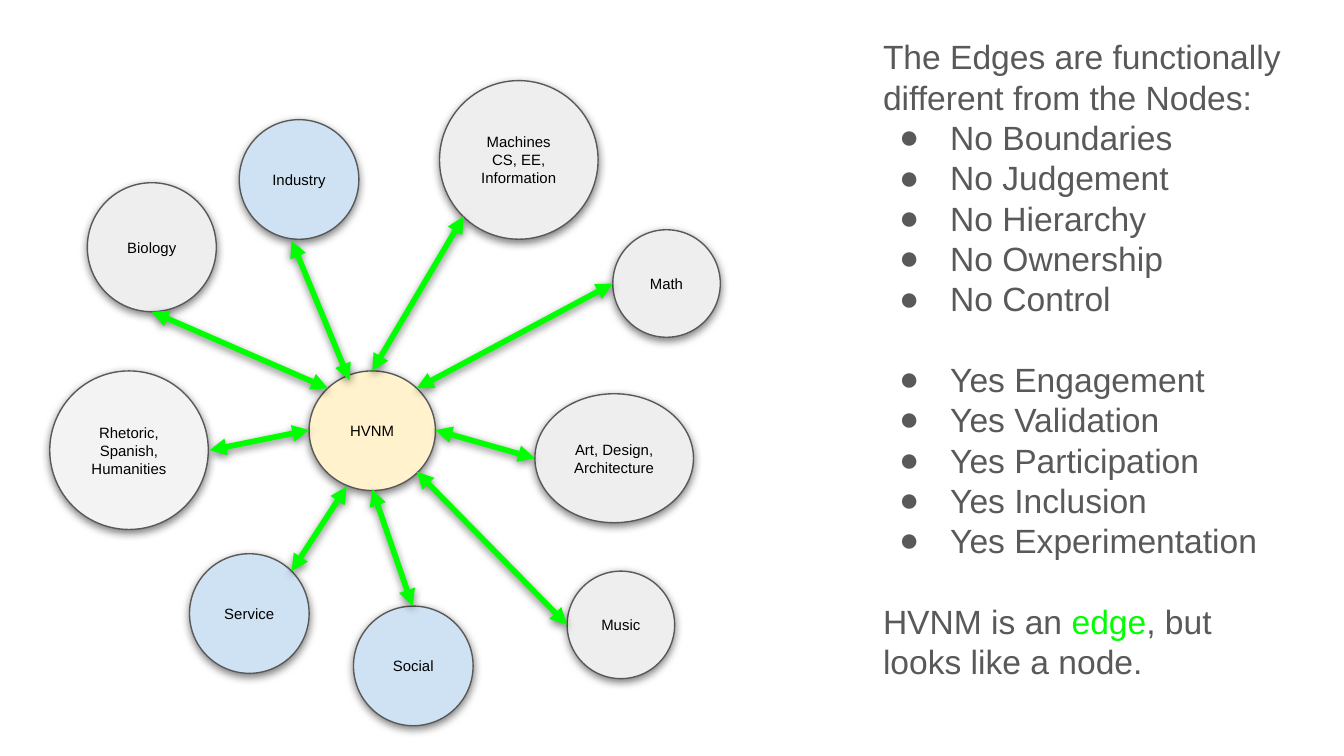
from lxml.etree import SubElement as Sub
from pptx import Presentation
from pptx.dml.color import RGBColor
from pptx.enum.shapes import MSO_CONNECTOR as Line, MSO_SHAPE as Shape
from pptx.enum.text import MSO_ANCHOR as Anchor, MSO_AUTO_SIZE as Fit, PP_ALIGN as Align
from pptx.oxml.ns import qn
from pptx.util import Inches, Pt

GRAY, BLUE, DARK, GREEN = "EEEEEE", "CFE2F3", "595959", "00FF00"
LEAD = 21.6

NODES = [
    ("Machines\nCS, EE, Information", 3.27, 0.6, 1.18, 1.18, GRAY),
    ("Art, Design, Architecture", 3.98, 2.93, 1.18, 0.96, GRAY),
    ("HVNM", 2.3, 2.76, 0.94, 0.89, "FFF2CC"),
    ("Biology", 0.65, 1.36, 0.96, 0.96, GRAY),
    ("Math", 4.56, 1.71, 0.8, 0.8, GRAY),
    ("Service", 1.41, 4.12, 0.89, 0.89, BLUE),
    ("Social", 2.63, 4.51, 0.89, 0.89, BLUE),
    ("Music", 4.22, 4.25, 0.8, 0.8, GRAY),
    ("Rhetoric, Spanish,\nHumanities", 0.37, 2.76, 1.18, 1.18, "F3F3F3"),
    ("Industry", 1.78, 0.89, 0.89, 0.89, BLUE),
]

EDGES = [
    (1.13, 2.32, 2.44, 2.89),
    (2.77, 2.76, 3.45, 1.61),
    (4.56, 2.11, 3.1, 2.89),
    (3.07, 4.51, 2.77, 3.64),
    (1.56, 3.35, 2.3, 3.2),
    (2.17, 4.25, 2.58, 3.62),
    (3.98, 3.41, 3.24, 3.2),
    (4.22, 4.65, 3.1, 3.51),
    (2.17, 1.79, 2.6, 2.83),
]

NO = ["Boundaries", "Judgement", "Hierarchy", "Ownership", "Control"]
YES = ["Engagement", "Validation", "Participation", "Inclusion", "Experimentation"]


def color(code):
    return RGBColor.from_string(code)


def write(par, text, size=18, code=DARK, align=Align.LEFT):
    par.alignment = align
    run = par.add_run()
    run.text = text
    run.font.name = "Arial"
    run.font.size = Pt(size)
    run.font.color.rgb = color(code)


def shade(props):
    for old in props.findall(qn("a:effectLst")):
        props.remove(old)
    group = Sub(props, qn("a:effectLst"))
    outer = Sub(group, qn("a:outerShdw"), blurRad=str(Pt(4.5)), dist=str(Pt(1.5)),
                dir="5400000", algn="bl", rotWithShape="0")
    black = Sub(outer, qn("a:srgbClr"), val="000000")
    Sub(black, qn("a:alpha"), val="50000")


def inset(frame):
    frame.margin_left = frame.margin_right = Inches(0.1)
    frame.margin_top = frame.margin_bottom = Inches(0.1)
    frame.word_wrap = True


def add_node(slide, text, left, top, width, height, fill):
    node = slide.shapes.add_shape(Shape.OVAL, Inches(left), Inches(top),
                                  Inches(width), Inches(height))
    node.fill.solid()
    node.fill.fore_color.rgb = color(fill)
    node.line.color.rgb = color(DARK)
    node.line.width = Pt(0.75)
    shade(node.element.spPr)
    frame = node.text_frame
    inset(frame)
    frame.vertical_anchor = Anchor.MIDDLE
    for i, line in enumerate(text.split("\n")):
        par = frame.add_paragraph() if i else frame.paragraphs[0]
        write(par, line, size=8, code="000000", align=Align.CENTER)


def add_edge(slide, *ends):
    edge = slide.shapes.add_connector(Line.STRAIGHT, *map(Inches, ends))
    edge.line.color.rgb = color(GREEN)
    edge.line.width = Pt(3)
    stroke = edge.element.spPr.find(qn("a:ln"))
    for tag in ("a:headEnd", "a:tailEnd"):
        Sub(stroke, qn(tag), type="triangle")
    shade(edge.element.spPr)


def add_par(frame, first=False, gap=0, bullet=False):
    par = frame.paragraphs[0] if first else frame.add_paragraph()
    par.line_spacing = 1.0
    par.space_before = Pt(gap)
    par.space_after = Pt(0)
    props = par._p.get_or_add_pPr()
    props.set("marL", str(Inches(0.5 if bullet else 0)))
    props.set("indent", str(Inches(-0.38 if bullet else 0)))
    if bullet:
        tint = Sub(props, qn("a:buClr"))
        Sub(tint, qn("a:srgbClr"), val=DARK)
        Sub(props, qn("a:buFont"), typeface="Arial")
        Sub(props, qn("a:buChar"), char="●")
    else:
        Sub(props, qn("a:buNone"))
    return par


def add_list(frame, lead, words, gap=0):
    for i, word in enumerate(words):
        par = add_par(frame, gap=0 if i else gap, bullet=True)
        write(par, f"{lead} {word}")


def add_notes(slide):
    body = slide.placeholders[1]
    body.left, body.top = Inches(6.47), Inches(0.17)
    body.width, body.height = Inches(3.19), Inches(3.89)
    frame = body.text_frame
    inset(frame)
    frame.auto_size = Fit.NONE
    frame.vertical_anchor = Anchor.TOP
    write(add_par(frame, first=True), "The Edges are functionally different from the Nodes:")
    add_list(frame, "No", NO)
    add_list(frame, "Yes", YES, gap=LEAD)
    last = add_par(frame, gap=LEAD)
    write(last, "HVNM is an ")
    write(last, "edge", code=GREEN)
    write(last, ", but looks like a node.")


def main():
    deck = Presentation()
    deck.slide_width, deck.slide_height = Inches(10), Inches(10 * 9 / 16)
    slide = deck.slides.add_slide(deck.slide_layouts[1])
    title = slide.shapes.title.element
    title.getparent().remove(title)
    add_notes(slide)
    for node in NODES:
        add_node(slide, *node)
    for edge in EDGES:
        add_edge(slide, *edge)
    deck.save("out.pptx")


if __name__ == "__main__":
    main()
